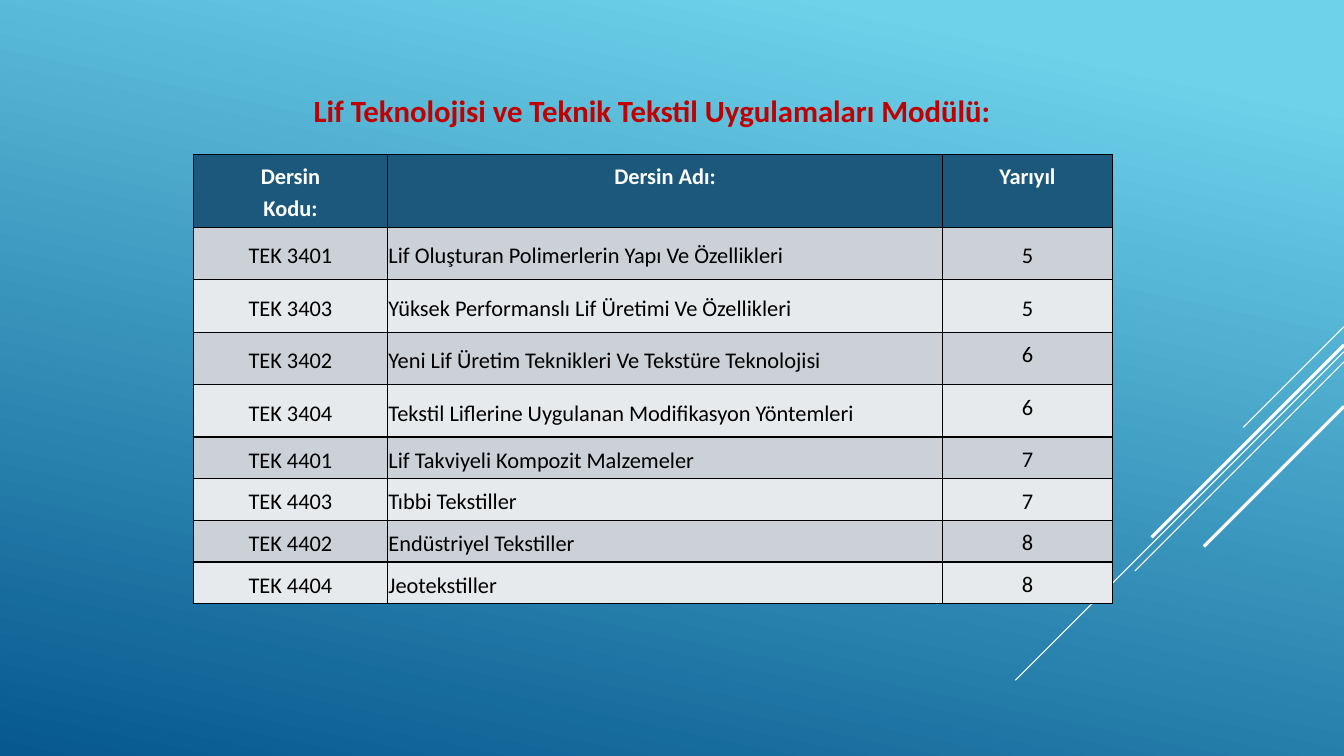
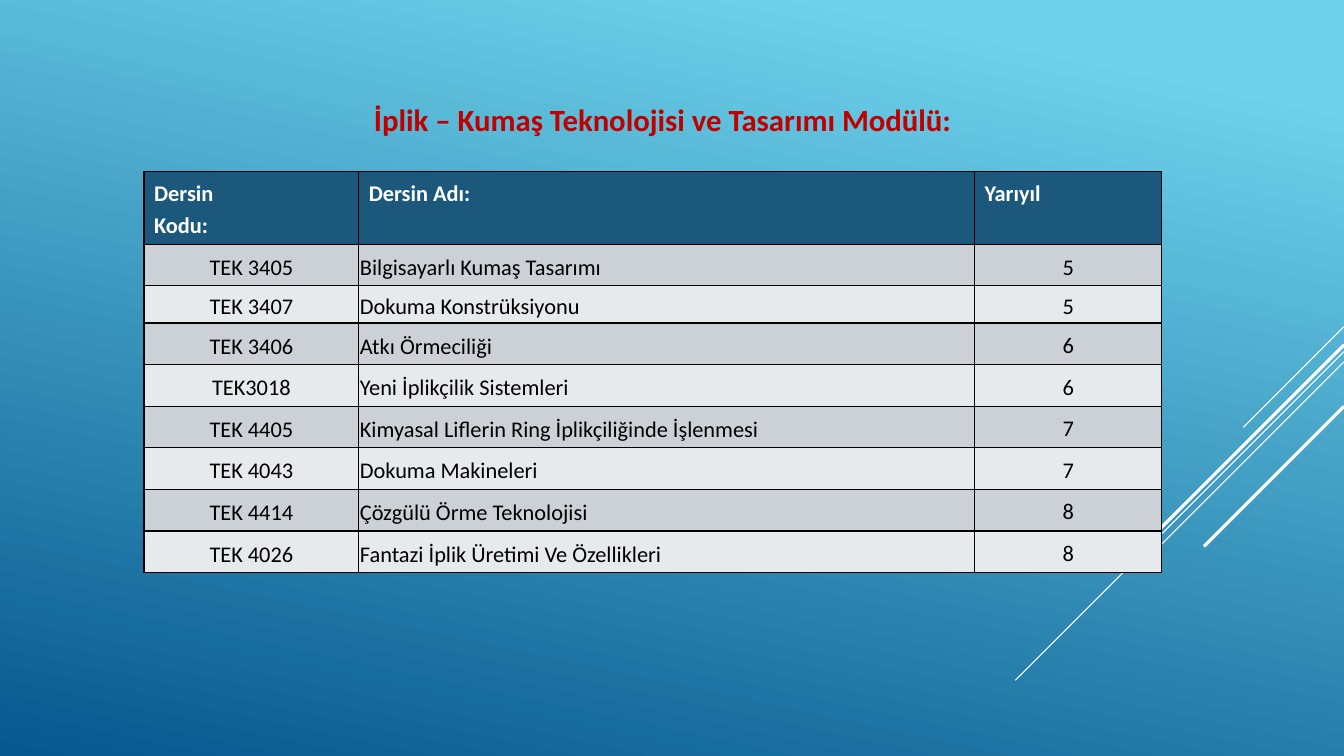
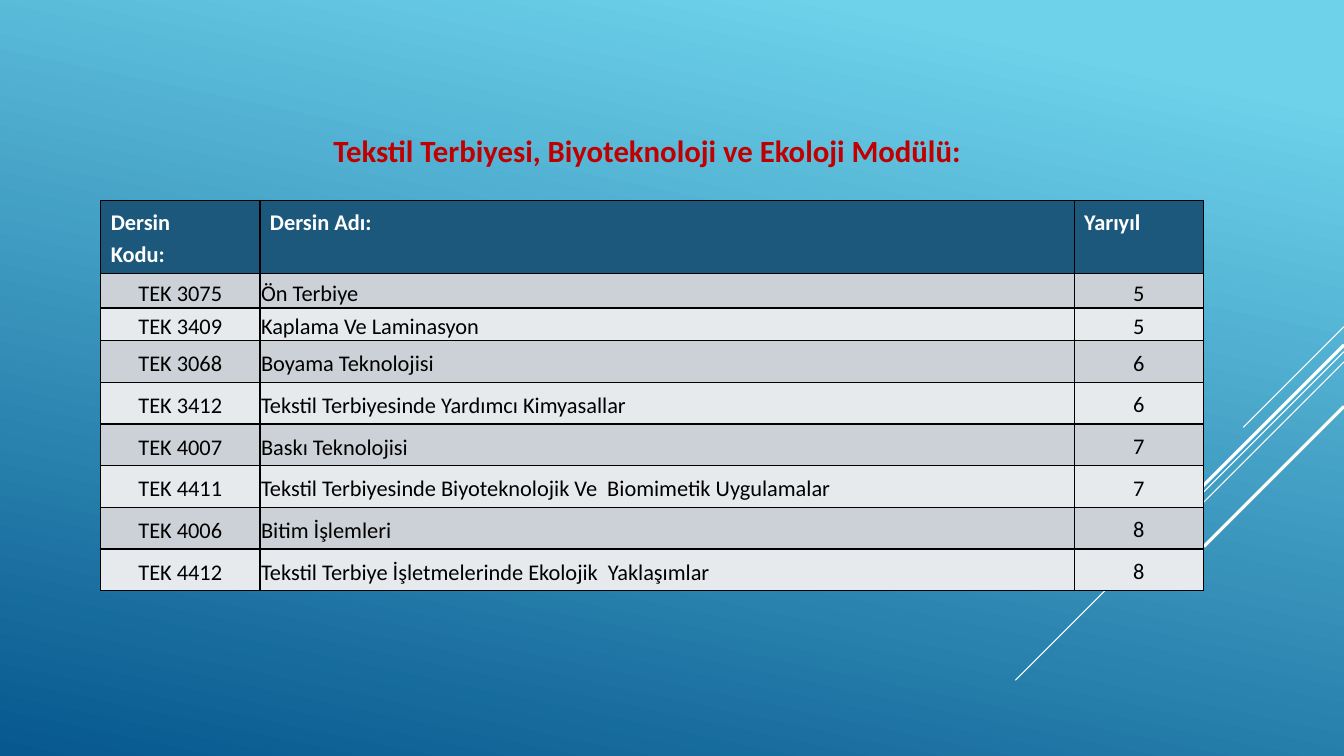
from lxml import etree
from pptx import Presentation
from pptx.dml.color import RGBColor
from pptx.enum.shapes import MSO_CONNECTOR
from pptx.enum.text import MSO_ANCHOR, PP_ALIGN
from pptx.oxml.ns import qn
from pptx.util import Cm, Pt

LEFT, CENTER = PP_ALIGN.LEFT, PP_ALIGN.CENTER
TOP, MIDDLE = MSO_ANCHOR.TOP, MSO_ANCHOR.MIDDLE
STRAIGHT = MSO_CONNECTOR.STRAIGHT

# Content
HEAD = ("Dersin\nKodu:", "Dersin Adı:", "Yarıyıl")
TERMS = (5, 5, 6, 6, 7, 7, 8, 8)
SLIDES = [
    {
        "title": "Lif Teknolojisi ve Teknik Tekstil Uygulamaları Modülü:",
        "at": (7.65, 2.18),
        "table": (4.88, 3.89),
        "cols": (4.88, 14, 4.27),
        "rows": [1.84] + [1.32] * 4 + [1.05] * 4,
        "align": CENTER,
        "courses": [
            ("TEK 3401", "Lif Oluşturan Polimerlerin Yapı Ve Özellikleri"),
            ("TEK 3403", "Yüksek Performanslı Lif Üretimi Ve Özellikleri"),
            ("TEK 3402", "Yeni Lif Üretim Teknikleri Ve Tekstüre Teknolojisi"),
            ("TEK 3404", "Tekstil Liflerine Uygulanan Modifikasyon Yöntemleri"),
            ("TEK 4401", "Lif Takviyeli Kompozit Malzemeler"),
            ("TEK 4403", "Tıbbi Tekstiller"),
            ("TEK 4402", "Endüstriyel Tekstiller"),
            ("TEK 4404", "Jeotekstiller"),
        ],
    },
    {
        "title": "İplik – Kumaş Teknolojisi ve Tasarımı Modülü:",
        "at": (9.17, 2.41),
        "table": (3.63, 4.32),
        "cols": (5.41, 15.52, 4.72),
        "rows": [1.8, 1.04, 0.94] + [1.04] * 6,
        "align": LEFT,
        "courses": [
            ("TEK 3405", "Bilgisayarlı Kumaş Tasarımı"),
            ("TEK 3407", "Dokuma Konstrüksiyonu"),
            ("TEK 3406", "Atkı Örmeciliği"),
            ("TEK3018", "Yeni İplikçilik Sistemleri"),
            ("TEK 4405", "Kimyasal Liflerin Ring İplikçiliğinde İşlenmesi"),
            ("TEK 4043", "Dokuma Makineleri"),
            ("TEK 4414", "Çözgülü Örme Teknolojisi"),
            ("TEK 4026", "Fantazi İplik Üretimi Ve Özellikleri"),
        ],
    },
    {
        "title": "Tekstil Terbiyesi, Biyoteknoloji ve Ekoloji Modülü:",
        "at": (8.15, 3.18),
        "table": (2.54, 5.05),
        "cols": (4.01, 20.52, 3.25),
        "rows": [1.84, 0.87, 0.81] + [1.05] * 6,
        "align": LEFT,
        "courses": [
            ("TEK 3075", "Ön Terbiye"),
            ("TEK 3409", "Kaplama Ve Laminasyon"),
            ("TEK 3068", "Boyama Teknolojisi"),
            ("TEK 3412", "Tekstil Terbiyesinde Yardımcı Kimyasallar"),
            ("TEK 4007", "Baskı Teknolojisi"),
            ("TEK 4411", "Tekstil Terbiyesinde Biyoteknolojik Ve  Biomimetik Uygulamalar"),
            ("TEK 4006", "Bitim İşlemleri"),
            ("TEK 4412", "Tekstil Terbiye İşletmelerinde Ekolojik  Yaklaşımlar"),
        ],
    },
]

# Shared look
COLORS = {
    "light": "6ED2EB", "deep": "06588E", "title": "C00000", "head": "1B587C",
    "odd": "CCD1D7", "even": "E7EAEC", "white": "FFFFFF", "black": "000000",
}
FONT = "Calibri"
WIDTH, HEIGHT = 33.87, 19.05
# Diagonals from the right edge: top, extent, line width
RAYS = [(8.23, 2.54, 0.75), (8.86, 8.28, 0.75), (9.12, 5.27, 0.75),
        (8.69, 4.85, 2.25), (10.24, 3.53, 2.25)]


def color(name):
    return RGBColor.from_string(COLORS[name])


def style(par, size, tint, bold, align):
    par.alignment = align
    font = par.font
    font.name, font.size, font.bold = FONT, Pt(size), bold
    font.color.rgb = color(tint)


def paint_back(master):
    fill = master.background.fill
    fill.gradient()
    fill.gradient_angle = 258
    for stop, name, place in zip(fill.gradient_stops, ("light", "deep"), (0.1, 1)):
        stop.color.rgb = color(name)
        stop.position = place


def add_rays(slide, master):
    """Draw the diagonals and move them to the master."""
    for top, size, width in RAYS:
        ray = slide.shapes.add_connector(
            STRAIGHT, Cm(WIDTH), Cm(top), Cm(WIDTH - size), Cm(top + size))
        ray.line.color.rgb = color("white")
        ray.line.width = Pt(width)
        etree.SubElement(ray.element.spPr, qn("a:effectLst"))
        master.element.cSld.spTree.append(ray.element)


def add_title(slide, text, at):
    title = slide.shapes.title
    title.left, title.top = map(Cm, at)
    title.width, title.height = Cm(20.8), Cm(1.19)
    frame = title.text_frame
    frame.text = text
    frame.vertical_anchor = TOP
    style(frame.paragraphs[0], 22, "title", True, LEFT)


def add_border(cell):
    props = cell._tc.get_or_add_tcPr()
    for spot, side in enumerate(("lnL", "lnR", "lnT", "lnB")):
        line = etree.Element(qn("a:" + side), w=str(Pt(1)))
        fill = etree.SubElement(line, qn("a:solidFill"))
        etree.SubElement(fill, qn("a:srgbClr"), val=COLORS["black"])
        props.insert(spot, line)


def fill_cell(cell, text, row, col, align):
    cell.text = text
    cell.fill.solid()
    band = "head" if row == 0 else "odd" if row % 2 else "even"
    cell.fill.fore_color.rgb = color(band)
    # Body cells are tight, save the terms from the third course on
    if row and (col < 2 or row < 3):
        cell.vertical_anchor = MIDDLE
        cell.margin_left = cell.margin_right = cell.margin_top = Cm(0.03)
        cell.margin_bottom = 0
    for par in cell.text_frame.paragraphs:
        style(par, 16, "black" if row else "white", row == 0, align)
        par.line_spacing = 1.15
    add_border(cell)


def add_courses(slide, data):
    cols, rows = data["cols"], data["rows"]
    left, top = data["table"]
    table = slide.shapes.add_table(
        len(rows), len(cols), Cm(left), Cm(top), Cm(sum(cols)), Cm(sum(rows))).table
    table.horz_banding = False
    for col, width in enumerate(cols):
        table.columns[col].width = Cm(width)
    lines = [HEAD] + [(*pair, str(term)) for pair, term in zip(data["courses"], TERMS)]
    for row, line in enumerate(lines):
        table.rows[row].height = Cm(rows[row])
        for col, text in enumerate(line):
            align = data["align"] if row == 0 else LEFT if col == 1 else CENTER
            fill_cell(table.cell(row, col), text, row, col, align)


def main():
    deck = Presentation()
    deck.slide_width, deck.slide_height = Cm(WIDTH), Cm(HEIGHT)
    master = deck.slide_master
    paint_back(master)
    for data in SLIDES:
        slide = deck.slides.add_slide(deck.slide_layouts[5])
        add_title(slide, data["title"], data["at"])
        add_courses(slide, data)
    add_rays(slide, master)
    deck.save("out.pptx")


if __name__ == "__main__":
    main()
